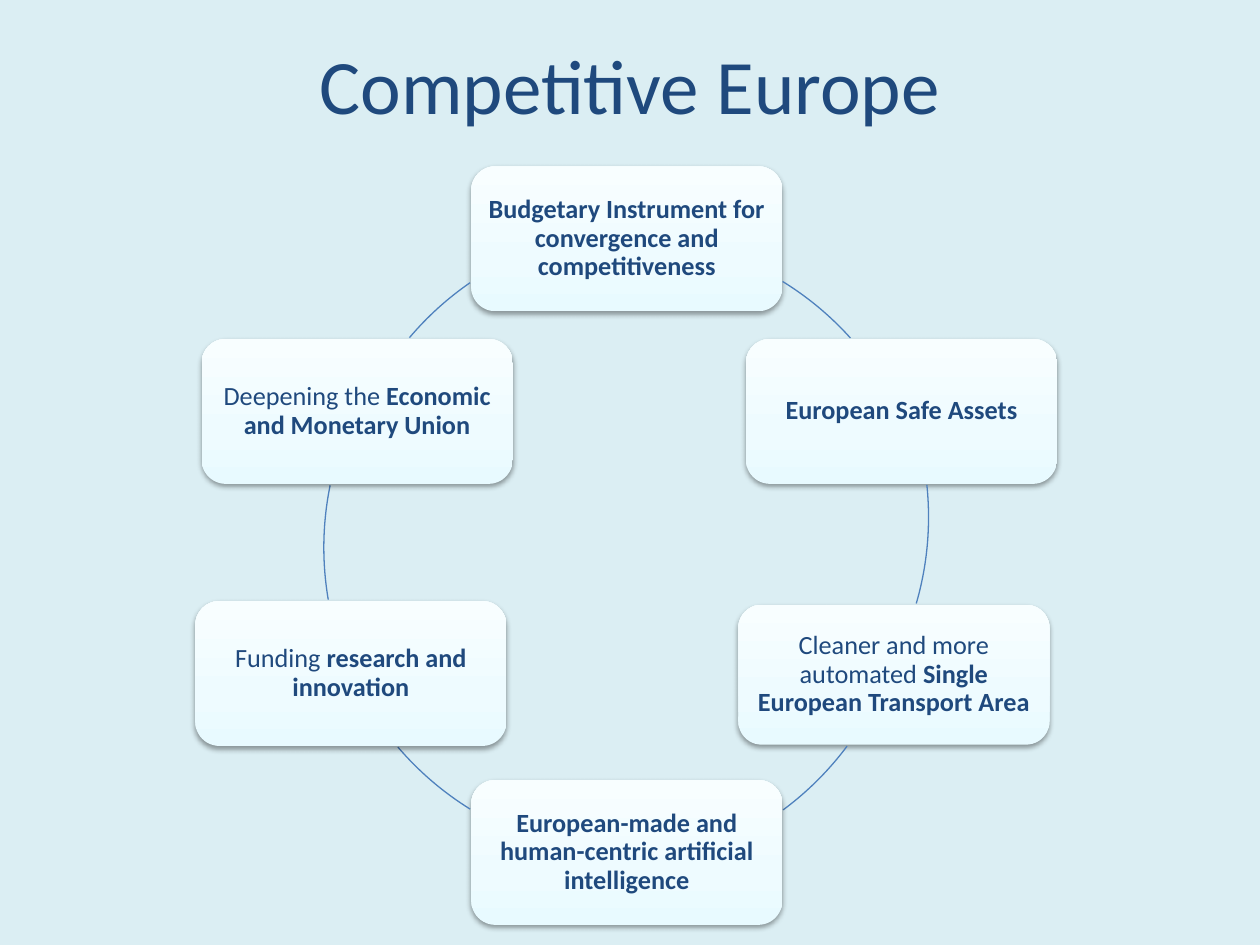
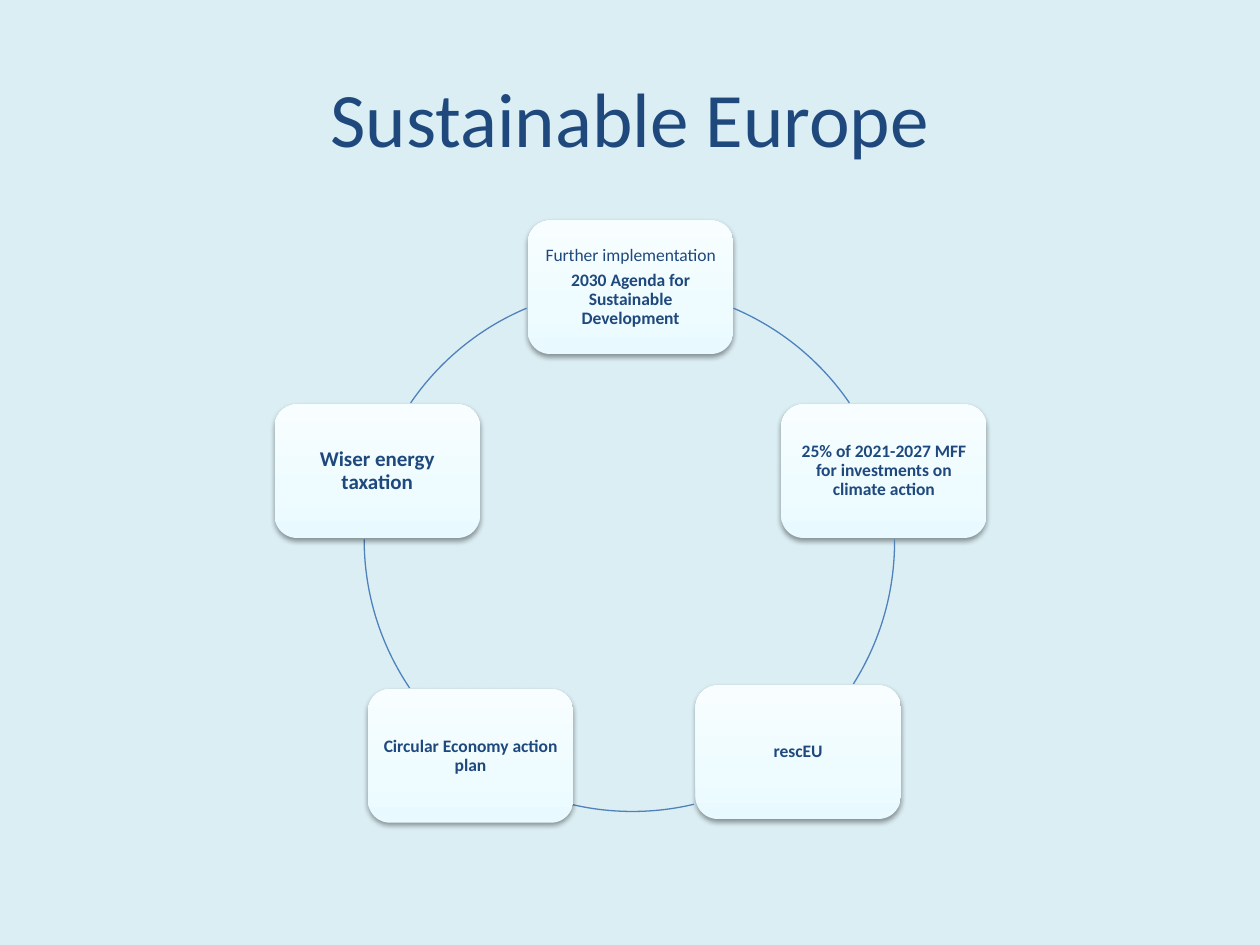
from collections import namedtuple

from lxml import etree
from pptx import Presentation
from pptx import util as u
from pptx.dml.color import RGBColor
from pptx.enum import shapes, text
from pptx.oxml import ns

SKY = RGBColor(0xDB, 0xEE, 0xF3)
NAVY = RGBColor(0x1F, 0x49, 0x7D)
RING_BLUE = RGBColor(0x4F, 0x81, 0xBD)
CARD_STOPS = {
    0: RGBColor(0xE8, 0xFA, 0xFF),
    35: RGBColor(0xEE, 0xFB, 0xFF),
    100: RGBColor(0xF8, 0xFE, 0xFF),
}
SHADOW = RGBColor(0, 0, 0)
FONT = "Calibri"

WIDTH, HEIGHT = u.Inches(10), u.Inches(7.5)
CELL = WIDTH / 100  # square grid, 100 columns by 75 rows
TITLE_LEFT, TITLE_WIDTH, TITLE_HEIGHT = 5, 90, 12.5

# place: offset in the cycle; lines: "regular|bold" paragraphs
# ring_place, sweep: box offset and angles of the arc to the next card
Topic = namedtuple("Topic", "place lines ring_place sweep size height",
                   defaults=(None, None))
Cycle = namedtuple("Cycle", "title title_top origin card size ring topics")

COMPETITIVE = Cycle("Competitive Europe", 0.4, (15.5, 13.2), (24.7, 11.5), 15, 49.1, [
    Topic((21.9, 0), ["|Budgetary Instrument for convergence and competitiveness"],
          (9.2, 5.5), (301.6, 318)),
    Topic((43.7, 13.7), ["|European Safe Assets"], (9.1, 3.3), (354, 16.2)),
    Topic((43.1, 34.8), ["Cleaner and more automated |Single European Transport Area"],
          (7.5, 6.8), (36.7, 53.5), height=11.1),
    Topic((21.9, 48.7), ["|European-made and human-centric artificial intelligence"],
          (10.2, 5.6), (121.8, 139.5)),
    Topic((0, 34.5), ["Funding |research and innovation"], (10.2, 5.7), (170.3, 191.6)),
    Topic((0.5, 13.7), ["Deepening the |Economic and Monetary Union"],
          (11.2, 4.9), (220.2, 235.4)),
])

SUSTAINABLE = Cycle("Sustainable Europe", 3, (21.8, 17.5), (16.3, 10.6), 10, 42.2, [
    Topic((20.1, 0), ["Further implementation|", "|2030 Agenda for Sustainable Development"],
          (7.1, 5.3), (292.9, 325.6)),
    Topic((40.2, 14.6), ["|25% of 2021-2027 MFF for investments on climate action"],
          (7, 4.4), (359.5, 32.3)),
    Topic((33.4, 36.9), ["|rescEU"], (7.3, 4.7), (76.6, 102.9)),
    Topic((7.4, 37.2), ["|Circular Economy action plan"], (7.1, 4.2), (146, 180)),
    Topic((0, 14.6), ["|Wiser energy taxation"], (7.1, 5.3), (214.4, 247.1), size=12),
])


def grid(*cells):
    return [u.Emu(round(cell * CELL)) for cell in cells]


def add_run(paragraph, words, size, bold=False):
    run = paragraph.add_run()
    run.text = words
    for name, value in {"name": FONT, "size": u.Pt(size), "bold": bold}.items():
        setattr(run.font, name, value)
    run.font.color.rgb = NAVY


def add_title(slide, title, top):
    holder = slide.shapes.title
    box = grid(TITLE_LEFT, top, TITLE_WIDTH, TITLE_HEIGHT)
    for side, length in zip(("left", "top", "width", "height"), box):
        setattr(holder, side, length)
    holder.text_frame.vertical_anchor = text.MSO_ANCHOR.MIDDLE
    paragraph = holder.text_frame.paragraphs[0]
    paragraph.alignment = text.PP_ALIGN.CENTER
    add_run(paragraph, title, 44)


def add_color(parent, rgb):
    return etree.SubElement(parent, ns.qn("a:srgbClr"), val=str(rgb))


def style_card(card):
    """Give the card its pale upward gradient and a soft shadow below."""
    card.line.fill.background()
    card.shadow.inherit = False
    properties = card.element.spPr

    gradient = etree.Element(ns.qn("a:gradFill"), rotWithShape="1")
    stops = etree.SubElement(gradient, ns.qn("a:gsLst"))
    for percent, rgb in CARD_STOPS.items():
        add_color(etree.SubElement(stops, ns.qn("a:gs"), pos=str(percent * 1000)), rgb)
    etree.SubElement(gradient, ns.qn("a:lin"), ang=str(270 * 60000), scaled="0")
    properties.find(ns.qn("a:ln")).addprevious(gradient)

    shadow = etree.SubElement(properties.find(ns.qn("a:effectLst")), ns.qn("a:outerShdw"),
                              blurRad=str(u.Pt(3.1)), dist=str(u.Pt(1.6)),
                              dir=str(90 * 60000), rotWithShape="0")
    etree.SubElement(add_color(shadow, SHADOW), ns.qn("a:alpha"), val="38000")


def add_card(slide, box, lines, size):
    card = slide.shapes.add_shape(shapes.MSO_SHAPE.ROUNDED_RECTANGLE, *grid(*box))
    style_card(card)
    frame = card.text_frame
    frame.word_wrap = True
    frame.vertical_anchor = text.MSO_ANCHOR.MIDDLE
    for side in ("left", "top", "right", "bottom"):
        setattr(frame, f"margin_{side}", u.Pt(size * 0.3))
    for index, line in enumerate(lines):
        paragraph = frame.add_paragraph() if index else frame.paragraphs[0]
        paragraph.alignment = text.PP_ALIGN.CENTER
        paragraph.line_spacing = 0.9
        if index < len(lines) - 1:
            paragraph.space_after = u.Pt(size * 0.35)
        for words, bold in zip(line.split("|"), (False, True)):
            if words:
                add_run(paragraph, words, size, bold)


def add_ring_arc(slide, box, sweep):
    arc = slide.shapes.add_shape(shapes.MSO_SHAPE.ARC, *grid(*box))
    for index, degrees in enumerate(sweep):
        arc.adjustments[index] = degrees * 0.6  # 60000 units a degree, scaled by 100000
    arc.fill.background()
    arc.shadow.inherit = False
    arc.line.color.rgb = RING_BLUE
    arc.line.width = u.Pt(0.75)


def add_cycle(slide, cycle):
    left, top = cycle.origin
    width, height = cycle.card
    for topic in cycle.topics:
        (x, y), (ring_x, ring_y) = topic.place, topic.ring_place
        add_card(slide, (left + x, top + y, width, topic.height or height),
                 topic.lines, topic.size or cycle.size)
        add_ring_arc(slide, (left + ring_x, top + ring_y, cycle.ring, cycle.ring),
                     topic.sweep)


def main():
    deck = Presentation()
    deck.slide_width, deck.slide_height = WIDTH, HEIGHT
    backdrop = deck.slide_master.background.fill
    backdrop.solid()
    backdrop.fore_color.rgb = SKY
    title_only = deck.slide_layouts[5]
    for cycle in (COMPETITIVE, SUSTAINABLE):
        slide = deck.slides.add_slide(title_only)
        add_title(slide, cycle.title, cycle.title_top)
        add_cycle(slide, cycle)
    deck.save("out.pptx")


if __name__ == "__main__":
    main()
